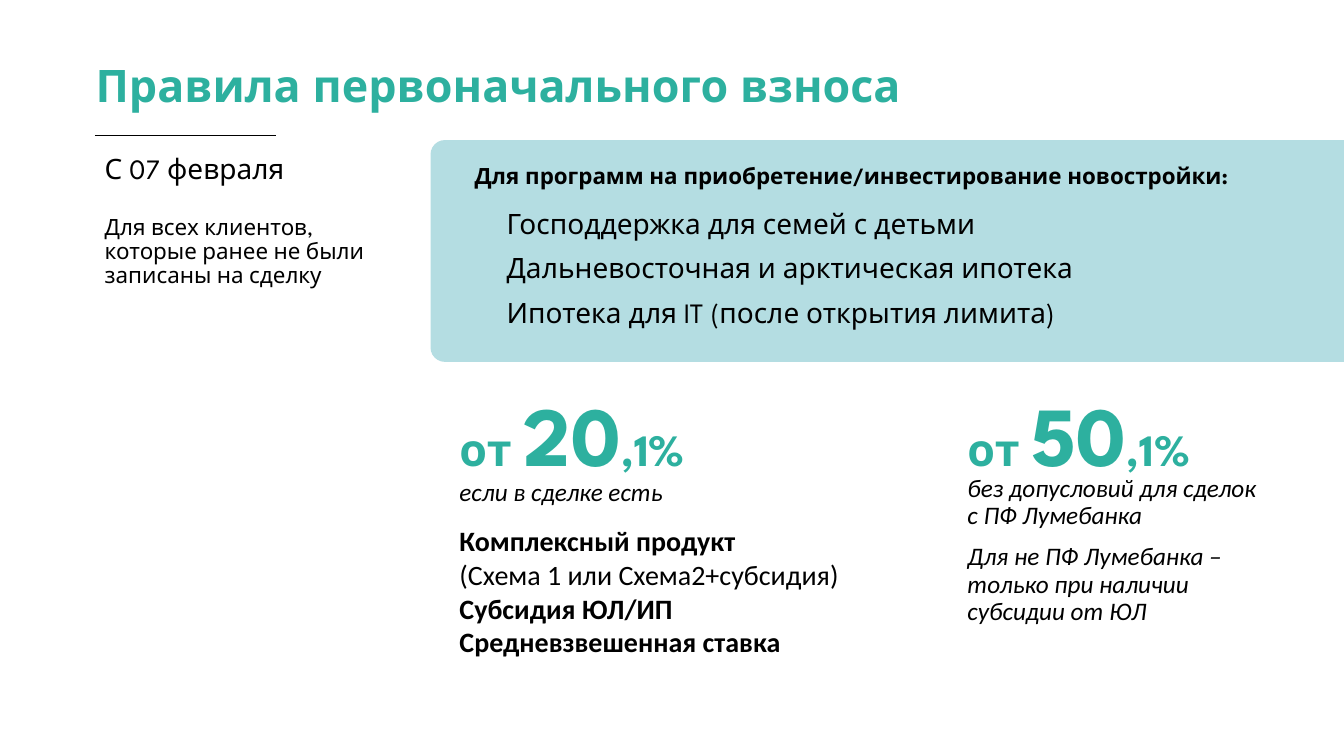
from dataclasses import dataclass

from lxml import etree
from pptx import Presentation
from pptx.dml.color import RGBColor as RGB
from pptx.enum.shapes import MSO_CONNECTOR as CONN, MSO_SHAPE as SHAPE
from pptx.enum.text import MSO_ANCHOR as ANCHOR, PP_ALIGN as ALIGN
from pptx.oxml.ns import qn
from pptx.util import Cm, Pt


@dataclass(frozen=True)
class Theme:
    accent: RGB = RGB(0x2D, 0xB0, 0x9F)
    panel: RGB = RGB(0x09, 0x90, 0xA2)
    ink: RGB = RGB(0, 0, 0)
    display: str = "League Spartan"
    body: str = "Calibri"
    figure: int = 60
    title: int = 32
    text: int = 20
    note: int = 18
    small: int = 16
    tight: float = 0.9


T = Theme()


def add_panel(s, x, y, w, h):
    sp = s.shapes.add_shape(SHAPE.ROUNDED_RECTANGLE, Cm(x), Cm(y), Cm(w), Cm(h))
    sp.adjustments[0] = 0.065
    sp.shadow.inherit = False
    sp.line.fill.background()
    sp.fill.solid()
    sp.fill.fore_color.rgb = T.panel
    color = sp.fill._xPr.find(qn("a:solidFill"))[0]
    etree.SubElement(color, qn("a:alpha"), val="30000")


def add_rule(s, x1, x2, y):
    line = s.shapes.add_connector(CONN.STRAIGHT, Cm(x1), Cm(y), Cm(x2), Cm(y))
    line.line.color.rgb = T.ink
    line.line.width = Pt(0.5)
    etree.SubElement(line._element.spPr, qn("a:effectLst"))


def add_box(s, x, y, w, h, anchor=ANCHOR.MIDDLE):
    tf = s.shapes.add_textbox(Cm(x), Cm(y), Cm(w), Cm(h)).text_frame
    tf.word_wrap = True
    tf.vertical_anchor = anchor
    return tf


def add_paragraph(tf, spacing=T.tight, before=0, align=ALIGN.LEFT):
    p = tf.paragraphs[0]
    if p.runs:
        p = tf.add_paragraph()
    p.line_spacing = spacing
    p.space_before = Pt(before)
    p.alignment = align
    return p


def add_run(p, text, size, font=T.display, color=T.ink, bold=False, italic=False):
    r = p.add_run()
    r.text = text
    r.font.size = Pt(size)
    r.font.name = font
    r.font.color.rgb = color
    r.font.bold = bold
    r.font.italic = italic


def add_title(s, text):
    p = add_paragraph(add_box(s, 2.16, 1.17, 28.45, 2.08))
    add_run(p, text, T.title, color=T.accent, bold=True)


def add_rate(s, x, whole):
    p = add_paragraph(add_box(s, x, 10.03, 28.45, 2.08))
    for text, size in (("от ", T.title), (whole, T.figure), (",1%", T.title)):
        add_run(p, text, size, color=T.accent, bold=True)


def add_audience(s):
    tf = add_box(s, 2.39, 3.78, 9.14, 3.63)
    for text, size, before in (
        ("С 07 февраля", T.text, 0),
        ("Для всех клиентов,", T.small, 22),
        ("которые ранее не были записаны на сделку", T.small, 0),
    ):
        add_run(add_paragraph(tf, before=before), text, size)


def add_programs(s):
    p = add_paragraph(add_box(s, 11.71, 4.04, 23.85, 0.86))
    add_run(p, "Для программ на приобретение/инвестирование новостройки:", T.small, bold=True)
    tf = add_box(s, 12.52, 5.18, 37.31, 4.7, ANCHOR.TOP)
    for text in (
        "Господдержка для семей с детьми",
        "Дальневосточная и арктическая ипотека",
        "Ипотека для IT (после открытия лимита)",
    ):
        add_run(add_paragraph(tf, before=10, align=ALIGN.JUSTIFY), text, T.text)


def add_products(s):
    tf = add_box(s, 11.33, 11.89, 16.56, 5.33, ANCHOR.TOP)
    add_run(add_paragraph(tf, 1.0), "если в сделке есть", T.note, T.body, italic=True)
    for text, bold, before in (
        ("Комплексный продукт", True, 12),
        ("(Схема 1 или Схема2+субсидия)", False, 0),
        ("Субсидия ЮЛ/ИП", True, 0),
        ("Средневзвешенная ставка", True, 0),
    ):
        add_run(add_paragraph(tf, 1.0, before), text, T.text, T.body, bold=bold)


def add_conditions(s):
    tf = add_box(s, 24.13, 11.86, 7.8, 1.96, ANCHOR.TOP)
    for text in (
        "без допусловий для сделок с ПФ Лумебанка",
        "Для не ПФ Лумебанка – только при наличии субсидии от ЮЛ",
    ):
        add_run(add_paragraph(tf, before=10), text, T.note, T.body, italic=True)


def main():
    prs = Presentation()
    prs.slide_width, prs.slide_height = Cm(33.87), Cm(19.05)
    s = prs.slides.add_slide(prs.slide_layouts[6])
    add_panel(s, 10.85, 3.53, 24.64, 5.59)
    add_rule(s, 2.39, 6.96, 3.4)
    add_title(s, "Правила первоначального взноса")
    add_audience(s)
    add_programs(s)
    add_rate(s, 11.33, "20")
    add_products(s)
    add_rate(s, 24.13, "50")
    add_conditions(s)
    prs.save("out.pptx")


if __name__ == "__main__":
    main()
